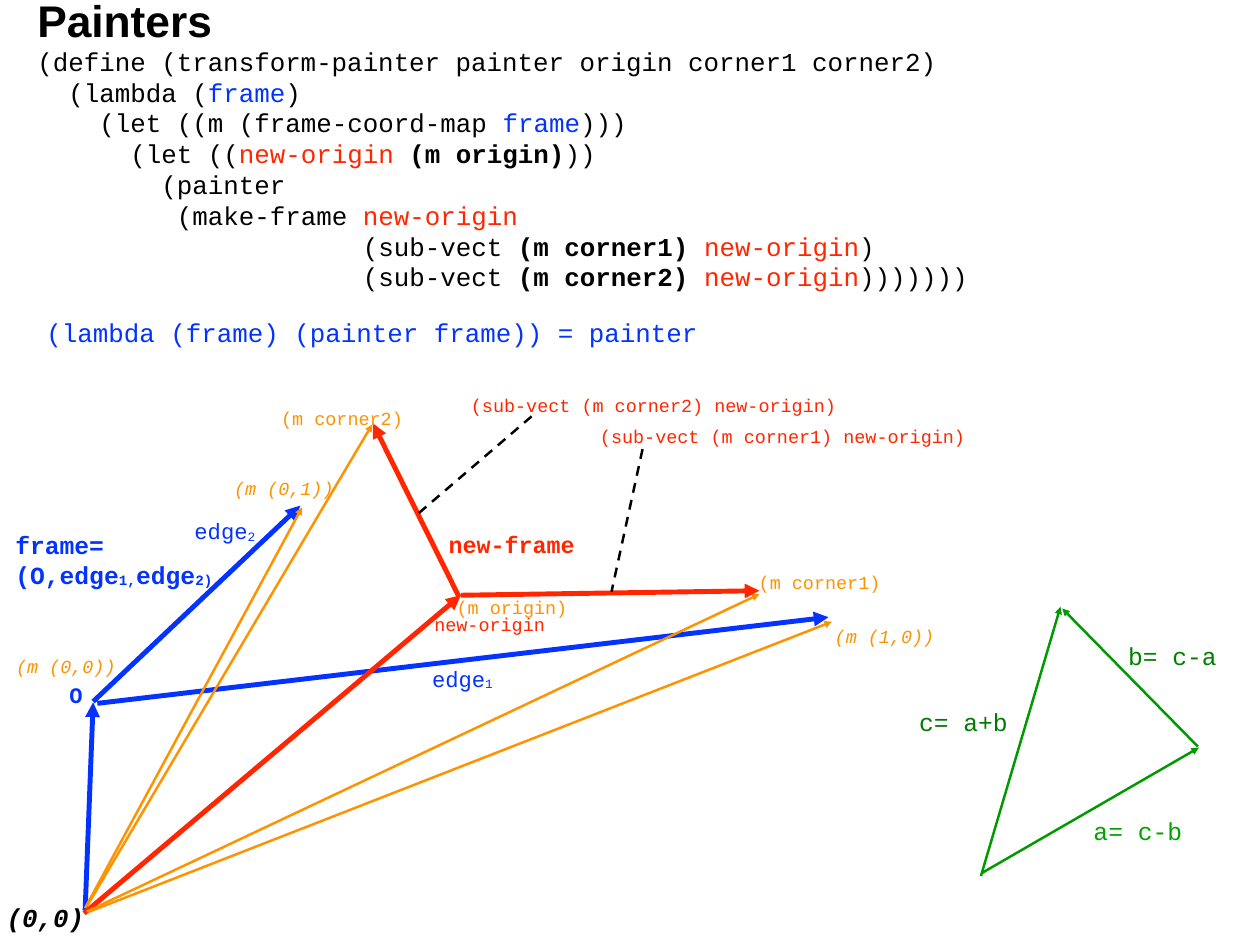
import lxml.etree
import pptx
import pptx.dml.color
import pptx.enum.dml
import pptx.enum.shapes
import pptx.enum.text
import pptx.oxml.ns
import pptx.util

Cm = pptx.util.Cm
Pt = pptx.util.Pt
INK, BLUE, RED, GOLD, GREEN = "000000", "0433FF", "FF2600", "FE9301", "009900"
MONO = "Courier New"
INSET = 0.16
SLACK = 0.04

TITLE = "Painters"
CODE = [
    (0, [("(define (transform-painter painter origin corner1 corner2)", INK)]),
    (2, [("(lambda (", INK), ("frame", BLUE), (")", INK)]),
    (4, [("(let ((m (frame-coord-map ", INK), ("frame", BLUE), (")))", INK)]),
    (6, [("(let ((", INK), ("new-origin ", RED), ("(m origin)", INK, True), ("))", INK)]),
    (8, [("(painter", INK)]),
    (9, [("(make-frame ", INK), ("new-origin", RED)]),
    (21, [("(sub-vect ", INK), ("(m corner1) ", INK, True), ("new-origin", RED), (")", INK)]),
    (21, [("(sub-vect ", INK), ("(m corner2) ", INK, True), ("new-origin", RED), (")))))))", INK)]),
]
RULE = "(lambda (frame) (painter frame)) = painter"

ARROWS = [
    (2.44, 15.11, 2.67, 9.14, BLUE, 4),
    (2.79, 9.17, 23.75, 6.7, BLUE, 4),
    (2.67, 9.12, 8.61, 3.5, BLUE, 4),
    (2.41, 15.19, 13.21, 6.07, RED, 4),
    (2.51, 14.96, 10.67, 1.17, GOLD, 2),
    (2.49, 15.14, 21.77, 6.04, GOLD, 2),
    (13.21, 6.07, 21.77, 5.94, RED, 4),
    (13.16, 6.12, 10.69, 1.14, RED, 4),
    (2.57, 15.14, 23.85, 6.83, GOLD, 2),
    (2.44, 15.04, 8.66, 3.55, GOLD, 2),
]
DASHES = [(15.24, 0.94, 12.01, 3.71), (18.42, 1.88, 17.53, 5.97)]
LABELS = [
    (1.83, 8.41, "O", 18, BLUE, True, False),
    (12.29, 6.42, "new-origin", 15, RED, False, False),
    (7.9, 0.51, "(m corner2)", 15, GOLD, False, False),
    (21.59, 5.23, "(m corner1)", 15, GOLD, False, False),
    (13.34, 0.13, "(sub-vect (m corner2) new-origin)", 15, RED, False, False),
    (17.04, 1.04, "(sub-vect (m corner1) new-origin)", 15, RED, False, False),
    (12.7, 4.06, "new-frame", 19, RED, True, False),
    (0.03, 14.7, "(0,0)", 21, INK, True, True),
    (0.3, 7.62, "(m (0,0))", 15, GOLD, False, True),
    (23.77, 6.78, "(m (1,0))", 15, GOLD, False, True),
    (6.55, 2.51, "(m (0,1))", 15, GOLD, False, True),
    (12.93, 5.94, "(m origin)", 15, GOLD, False, False),
]
EDGES = [(12.22, 7.95, "1"), (5.41, 3.71, "2")]
FRAME = [
    [("frame=", False)],
    [("(O,edge", False), ("1,", True), ("edge", False), ("2)", True)],
]

SIDES = [
    (2.14, 8.04, 8.37, 4.44),
    (2.12, 8.12, 4.4, 0.4),
    (8.34, 4.41, 4.45, 0.45),
]
SUMS = [
    (5.19, 6.24, "a= c-b", "00A400"),
    (6.18, 1.21, "b= c-a", "008000"),
    (0.19, 3.12, "c= a+b", "007B00"),
]


def tint(hue):
    return pptx.dml.color.RGBColor.from_string(hue)


def span(count, size):
    return count * 0.6 * size * 2.54 / 72


def style(run, size, hue, bold=False, slant=False, face=MONO, sub=False):
    font = run.font
    font.name, font.size = face, Pt(size)
    font.bold, font.italic = bold, slant
    font.color.rgb = tint(hue)
    if sub:
        run._r.get_or_add_rPr().set("baseline", "-5999")


def pitch(para, size):
    para.line_spacing = Pt(size * 6 // 5)


def add_part(para, text):
    run = para.add_run()
    run.text = text
    return run


def add_box(slide, left, top, width, height, wrap):
    box = slide.shapes.add_textbox(Cm(left), Cm(top), Cm(width), Cm(height))
    frame = box.text_frame
    frame.word_wrap = wrap
    if not wrap:
        frame.auto_size = pptx.enum.text.MSO_AUTO_SIZE.SHAPE_TO_FIT_TEXT
    frame.margin_left = frame.margin_right = Cm(INSET)
    frame.margin_top = frame.margin_bottom = Cm(INSET)
    return frame


def add_label(slide, left, top, text, size, hue, bold=False, slant=False, index=""):
    width = span(len(text) + 0.6 * len(index), size) + 2 * (INSET + SLACK)
    frame = add_box(slide, left - SLACK, top, width, size * 0.042 + 0.28, False)
    frame.text = text
    para = frame.paragraphs[0]
    para.alignment = pptx.enum.text.PP_ALIGN.CENTER
    pitch(para, size)
    style(para.runs[0], size, hue, bold, slant)
    if index:
        style(add_part(para, index), size, hue, bold, slant, sub=True)


def add_line(slide, left, top, ends, hue, weight, dash=False):
    x1, y1, x2, y2 = ends
    line = slide.shapes.add_connector(
        pptx.enum.shapes.MSO_CONNECTOR.STRAIGHT,
        Cm(left + x1), Cm(top + y1), Cm(left + x2), Cm(top + y2))
    line.line.color.rgb = tint(hue)
    line.line.width = Pt(weight)
    prop = line._element.spPr
    qn = pptx.oxml.ns.qn
    if dash:
        line.line.dash_style = pptx.enum.dml.MSO_LINE.DASH
    else:
        tip = lxml.etree.SubElement(prop.find(qn("a:ln")), qn("a:tailEnd"))
        tip.set("type", "triangle")
    lxml.etree.SubElement(prop, qn("a:effectLst"))


def add_code(slide, left, top, width, height):
    frame = add_box(slide, left, top, width, height, True)
    frame.text = TITLE
    head = frame.paragraphs[0]
    pitch(head, 36)
    style(head.runs[0], 36, INK, True, face="Arial")
    for depth, parts in CODE:
        para = frame.add_paragraph()
        pitch(para, 21)
        para._p.get_or_add_pPr().set("marL", str(Cm(span(depth, 21))))
        for text, *look in parts:
            style(add_part(para, text), 21, *look)
    add_label(slide, left + 0.26, top + 9.28, RULE, 21, BLUE)


def add_graph(slide, left, top):
    for *ends, hue, weight in ARROWS:
        add_line(slide, left, top, ends, hue, weight)
    for ends in DASHES:
        add_line(slide, left, top, ends, INK, 2, True)
    for x, y, *label in LABELS:
        add_label(slide, left + x, top + y, *label)
    for x, y, index in EDGES:
        add_label(slide, left + x, top + y, "edge", 18, BLUE, index=index)
    frame = add_box(slide, left + 0.28, top + 4.04, 10.49, 1.98, True)
    for row, parts in enumerate(FRAME):
        para = frame.add_paragraph() if row else frame.paragraphs[0]
        pitch(para, 20)
        for text, sub in parts:
            style(add_part(para, text), 20, BLUE, True, sub=sub)


def add_sums(slide, left, top):
    for ends in SIDES:
        add_line(slide, left, top, ends, GREEN, 2)
    for x, y, text, hue in SUMS:
        add_label(slide, left + x, top + y, text, 20, hue)


def main():
    deck = pptx.Presentation()
    deck.slide_width, deck.slide_height = Cm(36.12), Cm(27.1)
    slide = deck.slides.add_slide(deck.slide_layouts[6])
    add_code(slide, 0.91, -0.36, 34.93, 8.86)
    add_graph(slide, 0, 11)
    add_sums(slide, 26, 17)
    deck.save("out.pptx")


if __name__ == "__main__":
    main()
